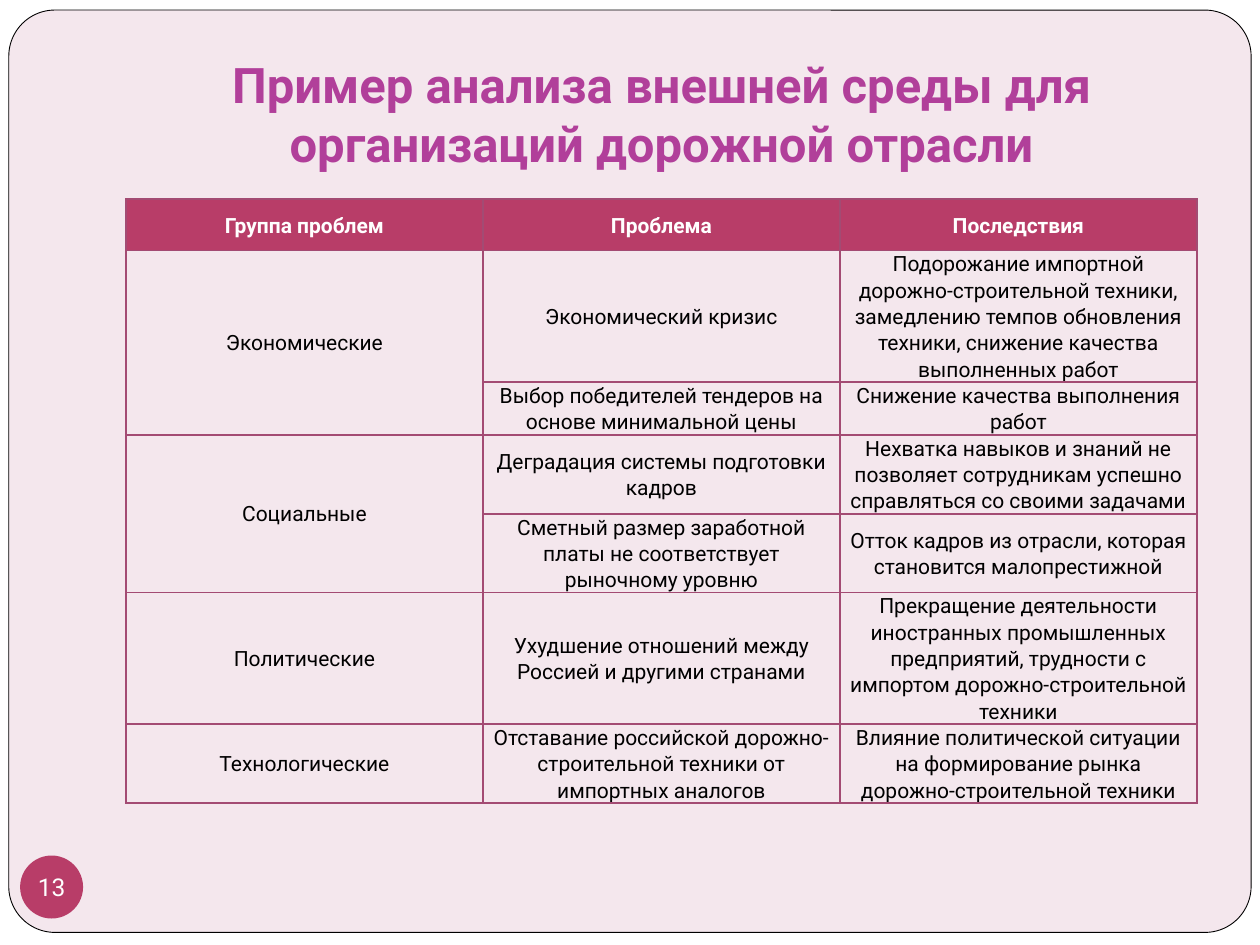
from lxml import etree
from pptx import Presentation
from pptx.dml.color import RGBColor
from pptx.enum.shapes import MSO_SHAPE
from pptx.enum.text import MSO_ANCHOR, MSO_AUTO_SIZE, PP_ALIGN
from pptx.oxml.ns import qn
from pptx.util import Inches, Pt

RECT = MSO_SHAPE.RECTANGLE
ROUND = MSO_SHAPE.ROUNDED_RECTANGLE
OVAL = MSO_SHAPE.OVAL
MIDDLE = MSO_ANCHOR.MIDDLE
FIXED = MSO_AUTO_SIZE.NONE
CENTER = PP_ALIGN.CENTER

FONT = "Roboto"
WHITE, BLACK = "FFFFFF", "000000"
PINK, ROSE = "F4E7ED", "B83D68"
PURPLE, PLUM = "B13F9A", "A34B73"

HEAD = ["Группа проблем", "Проблема", "Последствия"]
# Each group holds its pairs of problem and effect.
GROUPS = {
    "Экономические": [
        ("Экономический кризис",
         "Подорожание импортной дорожно-строительной техники, замедлению "
         "темпов обновления техники, снижение качества выполненных работ"),
        ("Выбор победителей тендеров на основе минимальной цены",
         "Снижение качества выполнения работ"),
    ],
    "Социальные": [
        ("Деградация системы подготовки кадров",
         "Нехватка навыков и знаний не позволяет сотрудникам успешно "
         "справляться со своими задачами"),
        ("Сметный размер заработной платы не соответствует рыночному уровню",
         "Отток кадров из отрасли, которая становится малопрестижной"),
    ],
    "Политические": [
        ("Ухудшение отношений между Россией и другими странами",
         "Прекращение деятельности иностранных промышленных предприятий, "
         "трудности с импортом дорожно-строительной техники"),
    ],
    "Технологические": [
        ("Отставание российской дорожно-строительной техники от импортных "
         "аналогов",
         "Влияние политической ситуации на формирование рынка "
         "дорожно-строительной техники"),
    ],
}


def rgb(code):
    return RGBColor.from_string(code)


def put(item, values):
    """Set attributes of item from a dict."""
    for name, value in values.items():
        setattr(item, name, value)


def margins(left, top, right, bottom):
    sides = {"left": left, "top": top, "right": right, "bottom": bottom}
    return {f"margin_{side}": Inches(size) for side, size in sides.items()}


def border(cell, color, width):
    props = cell._tc.get_or_add_tcPr()
    for side in ("a:lnL", "a:lnR", "a:lnT", "a:lnB"):
        line = etree.SubElement(props, qn(side), w=str(Pt(width)))
        fill = etree.SubElement(line, qn("a:solidFill"))
        etree.SubElement(fill, qn("a:srgbClr"), val=color)


class Page:
    """Holds the slide and its text style."""

    def __init__(self, deck):
        self.slide = deck.slides.add_slide(deck.slide_layouts[5])
        self.shapes = self.slide.shapes
        back = self.slide.background.fill
        back.solid()
        back.fore_color.rgb = rgb(PINK)

    def label(self, frame, text, size, color, bold=False, **layout):
        frame.text = text
        para = frame.paragraphs[0]
        put(para, {"alignment": CENTER, **layout})
        font = para.runs[0].font
        put(font, {"name": FONT, "size": Pt(size), "bold": bold})
        font.color.rgb = rgb(color)

    def shape(self, kind, box, fill, line=None):
        shape = self.shapes.add_shape(kind, *map(Inches, box))
        shape.shadow.inherit = False
        shape.fill.solid()
        shape.fill.fore_color.rgb = rgb(fill)
        if line:
            shape.line.color.rgb = rgb(line)
            shape.line.width = Pt(0.5)
        else:
            shape.line.fill.background()
        return shape

    def title(self, text, box):
        title = self.shapes.title
        put(title, dict(zip(("left", "top", "width", "height"),
                            map(Inches, box))))
        frame = title.text_frame
        put(frame, {"vertical_anchor": MIDDLE, "word_wrap": True,
                    "auto_size": FIXED, **margins(0.1, 0.05, 0.1, 0.1)})
        self.label(frame, text, 28, PURPLE, True)
        self.shapes._spTree.append(title._element)  # above the panels

    def badge(self, text, box):
        frame = self.shape(OVAL, box, ROSE).text_frame
        put(frame, {"vertical_anchor": MIDDLE, "word_wrap": False,
                    **margins(0, 0, 0, 0)})
        self.label(frame, text, 14, WHITE)

    def cell(self, cell, text, head=False):
        put(cell, {"vertical_anchor": MIDDLE, **margins(0.07, 0, 0.07, 0)})
        if text:
            self.label(cell.text_frame, text, 12, WHITE if head else BLACK,
                       head, line_spacing=1.07, space_after=Pt(6))
        border(cell, PLUM, 1)
        if head:
            cell.fill.solid()
            cell.fill.fore_color.rgb = rgb(ROSE)
        else:
            cell.fill.background()

    def table(self, head, groups, left, top, width, height):
        """Draw the groups, each spanning the rows of its pairs."""
        rows = [head]
        spans = []
        for name, pairs in groups.items():
            spans.append((len(rows), len(rows) + len(pairs) - 1))
            for num, pair in enumerate(pairs):
                rows.append(["" if num else name, *pair])
        table = self.shapes.add_table(
            len(rows), len(head), Inches(left), Inches(top), Inches(width),
            Inches(height * len(rows))).table
        table.horz_banding = False
        for row, texts in enumerate(rows):
            for col, text in enumerate(texts):
                self.cell(table.cell(row, col), text, row == 0)
        for first, last in spans:
            if last > first:
                table.cell(first, 0).merge(table.cell(last, 0))


def main():
    deck = Presentation()
    put(deck, {"slide_width": Inches(10), "slide_height": Inches(7.5)})
    page = Page(deck)
    page.shape(RECT, (0, 0, 10, 7.5), WHITE)
    panel = page.shape(ROUND, (0.07, 0.08, 9.86, 7.32), PINK, BLACK)
    panel.adjustments[0] = 0.05
    page.title("Пример анализа внешней среды для организаций дорожной отрасли",
               (1, 0.3, 8.5, 1.25))
    page.badge("13", (0.16, 6.79, 0.5, 0.5))
    page.table(HEAD, GROUPS, 1, 1.58, 8.5, 0.41)
    deck.save("out.pptx")


if __name__ == "__main__":
    main()
